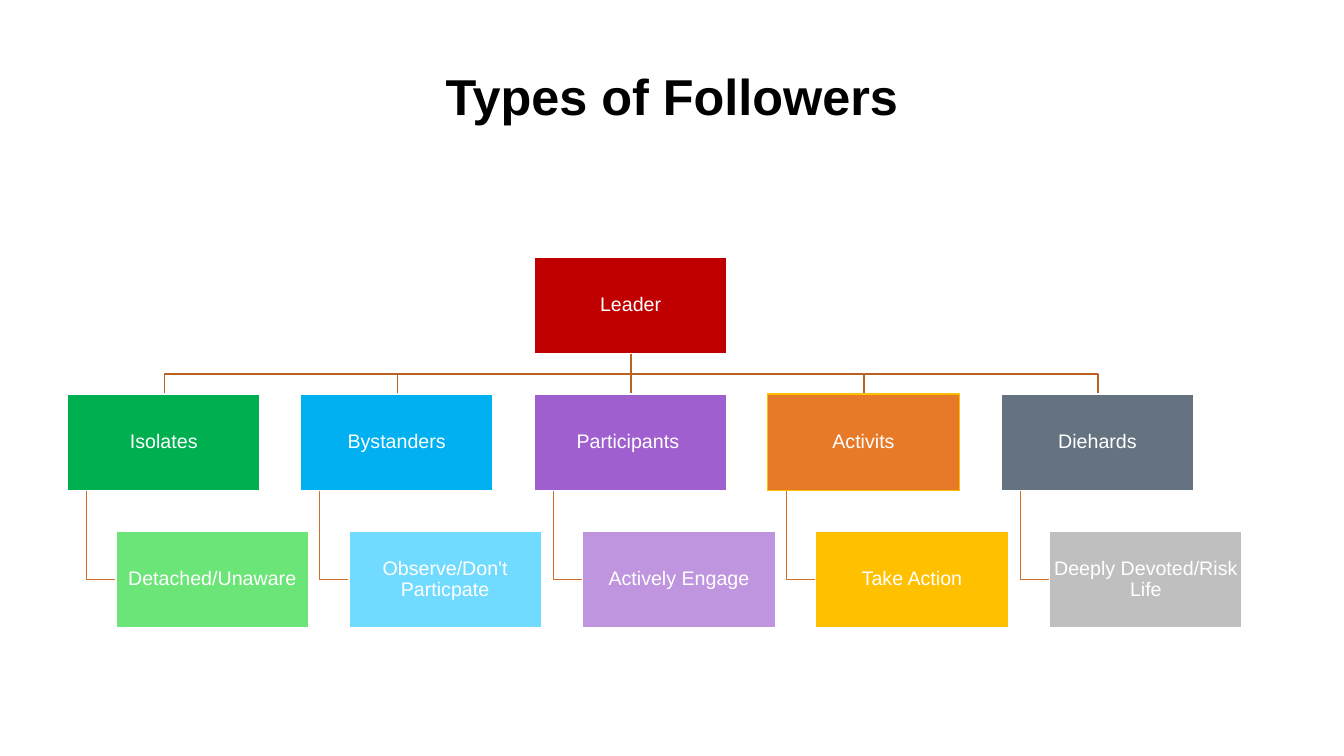
from pptx import Presentation
from pptx.dml.color import RGBColor
from pptx.enum.shapes import MSO_CONNECTOR, MSO_SHAPE
from pptx.enum.text import MSO_ANCHOR, PP_ALIGN
from pptx.util import Pt
from lxml.etree import SubElement

PX = 9144
HUES = {
    "white": "FFFFFF", "black": "000000", "red": "C00000",
    "green": "00B050", "mint": "6BE577", "blue": "00B0F0", "sky": "71DAFF",
    "purple": "9F5FCF", "lilac": "BF95DF", "orange": "E77A29",
    "gold": "FFC000", "slate": "657380", "grey": "BFBFBF",
    "trunk": "B96221", "twig": "D26F25",
}
WIDE, HIGH = 191, 96
LEFT, STEP = 67, 231.5
TOP, ROW, GAP = 255, 136, 40
SHIFT, STEM = 48, 19
TYPES = [
    ("Isolates", "green", "Detached/Unaware", "mint"),
    ("Bystanders", "blue", "Observe/Don't Particpate", "sky"),
    ("Participants ", "purple", "Actively Engage", "lilac"),
    ("Activits", "orange", "Take Action", "gold"),
    ("Diehards", "slate", "Deeply Devoted/Risk Life", "grey"),
]


def hue(name):
    return RGBColor.from_string(HUES[name])


def write(frame, text, size=14, color="white", bold=False,
          anchor=MSO_ANCHOR.MIDDLE, inset=1):
    frame.word_wrap = True
    frame.vertical_anchor = anchor
    frame.margin_left = frame.margin_right = inset * PX
    frame.margin_top = frame.margin_bottom = inset * PX
    line = frame.paragraphs[0]
    line.alignment = PP_ALIGN.CENTER
    line.line_spacing = 0.9
    run = line.add_run()
    run.text = text
    run.font.name = "Arial"
    run.font.size = Pt(size)
    run.font.bold = bold
    run.font.color.rgb = hue(color)


class Chart:
    def __init__(self, slide):
        self.slide = slide
        self.shapes = slide.shapes
        fill = slide.background.fill
        fill.solid()
        fill.fore_color.rgb = hue("white")

    def edge(self, shape, color):
        shape.line.color.rgb = hue(color)
        shape.line.width = Pt(1)

    def title(self, text, x, y, w, h):
        head = self.shapes.title
        head.left, head.top = x * PX, y * PX
        head.width, head.height = w * PX, h * PX
        write(head.text_frame, text, size=36, color="black", bold=True,
              anchor=MSO_ANCHOR.BOTTOM, inset=5)

    def box(self, text, x, y, fill, edge="white"):
        shape = self.shapes.add_shape(
            MSO_SHAPE.RECTANGLE, x * PX, y * PX, WIDE * PX, HIGH * PX)
        shape.shadow.inherit = False
        shape.fill.solid()
        shape.fill.fore_color.rgb = hue(fill)
        self.edge(shape, edge)
        write(shape.text_frame, text)

    def bend(self, points, color):
        pen = self.shapes.build_freeform(*points[0], scale=PX)
        pen.add_line_segments(points[1:], close=False)
        shape = pen.convert_to_shape()
        shape.shadow.inherit = False
        shape.fill.background()
        self.edge(shape, color)

    def line(self, x, y, end, color):
        link = self.shapes.add_connector(
            MSO_CONNECTOR.STRAIGHT, x * PX, y * PX, x * PX, end * PX)
        self.edge(link, color)
        props = link._element.spPr
        SubElement(props, props.tag.split("}")[0].replace(
            "presentationml", "drawingml") + "}effectLst")


def main():
    deck = Presentation()
    deck.slide_width, deck.slide_height = 1333 * PX, 750 * PX
    chart = Chart(deck.slides.add_slide(deck.slide_layouts[5]))
    chart.title("Types of Followers", 189, 55, 955, 75)

    spots = [int(LEFT + i * STEP) for i in range(len(TYPES))]
    mid = spots[len(spots) // 2]
    hub = mid + WIDE // 2 + 1
    base = TOP + HIGH
    fork = base + GAP // 2
    upper, lower = TOP + ROW, TOP + 2 * ROW

    for x in spots:
        chart.bend([(x + STEM, upper + HIGH), (x + STEM, lower + HIGH // 2),
                    (x + SHIFT, lower + HIGH // 2)], "twig")
        if x == mid:
            chart.line(hub, base, upper, "trunk")
        else:
            end = x + hub - mid
            chart.bend([(hub, base), (hub, fork), (end, fork),
                        (end, upper)], "trunk")

    chart.box("Leader", mid, TOP, "red")
    for x, (kind, dark, trait, light) in zip(spots, TYPES):
        edge = "gold" if dark == "orange" else "white"
        chart.box(kind, x, upper, dark, edge)
        chart.box(trait, x + SHIFT, lower, light)

    deck.save("out.pptx")


if __name__ == "__main__":
    main()
